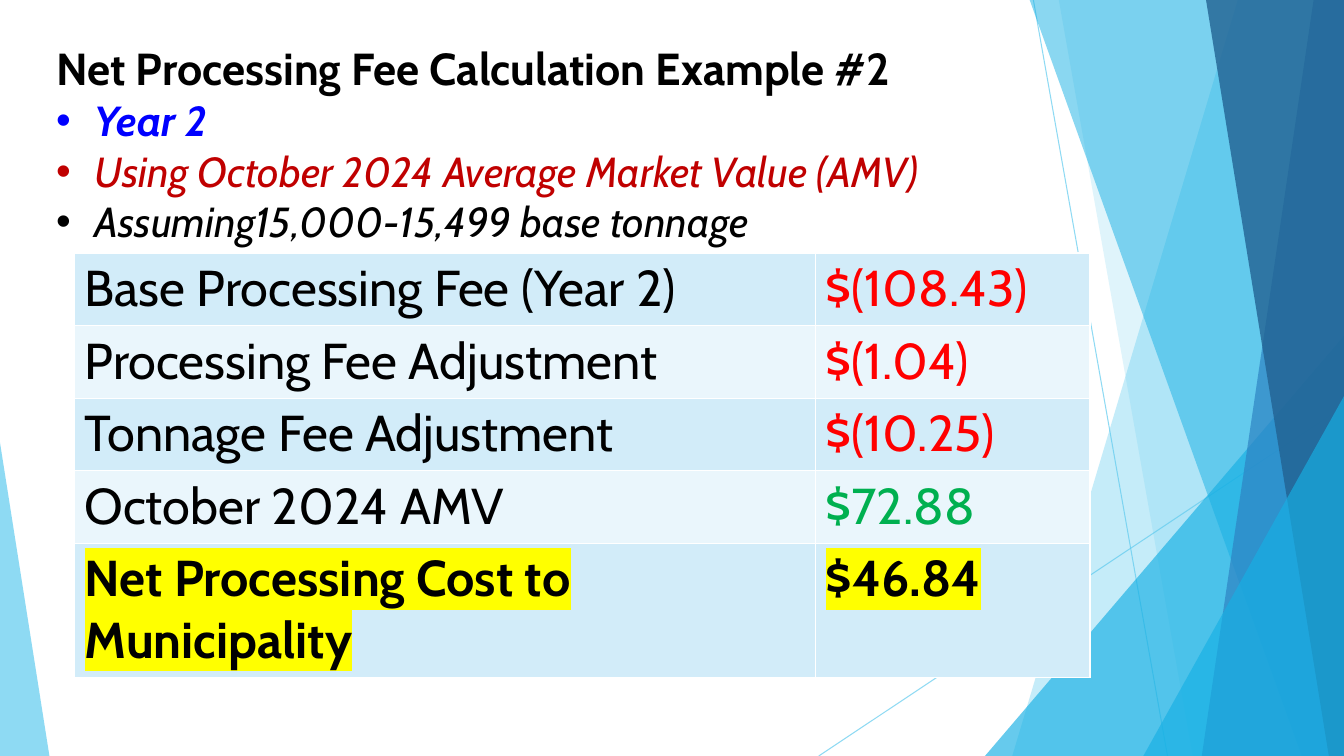
from dataclasses import dataclass

from lxml import etree
from pptx import Presentation
from pptx.dml.color import RGBColor
from pptx.enum.shapes import MSO_CONNECTOR, MSO_SHAPE
from pptx.enum.text import MSO_AUTO_SIZE
from pptx.oxml.ns import qn
from pptx.util import Emu, Inches, Pt

STRAIGHT = MSO_CONNECTOR.STRAIGHT
TRIANGLE = MSO_SHAPE.ISOSCELES_TRIANGLE
GROW = MSO_AUTO_SIZE.SHAPE_TO_FIT_TEXT
WIDTH, HEIGHT = Inches(13.33), Inches(7.5)


@dataclass(frozen=True)
class Theme:
    font: str = "Cabin"
    title_size: int = 32
    bullet_size: int = 30
    table_size: int = 36
    line_width: float = 0.75
    border_width: int = 1
    sky: str = "5FCBEF"
    azure: str = "17B0E4"
    blue: str = "2E83C3"
    navy: str = "226292"
    black: str = "000000"
    white: str = "FFFFFF"
    year: str = "0000FF"
    market: str = "C00000"
    charge: str = "FF0000"
    credit: str = "00B050"
    highlight: str = "FFFF00"
    bands: tuple[str, str] = ("D2ECF9", "EAF6FC")


THEME = Theme()


@dataclass(frozen=True)
class Ray:
    x1: float
    y1: float
    x2: float
    y2: float


@dataclass(frozen=True)
class Panel:
    top_x: float
    bottom_x: float
    color: str
    opacity: int


@dataclass(frozen=True)
class Wedge:
    left: float
    top: float
    width: float
    apex: int
    color: str
    opacity: int


@dataclass(frozen=True)
class Line:
    text: str
    size: int
    color: str = THEME.black
    bold: bool = False
    italic: bool = False
    bullet: bool = False


@dataclass(frozen=True)
class FeeRow:
    label: str
    amount: str
    color: str
    height: float = 9.6
    total: bool = False


RAYS = [Ray(76.89, 0, 86.87, 100), Ray(100, 53.73, 60.92, 100)]
DECOR = [
    Panel(92.12, 75.32, THEME.sky, 36),
    Panel(78.77, 88.75, THEME.sky, 20),
    Wedge(73.29, 44.4, 26.71, 1, THEME.azure, 66),
    Panel(76.59, 96.85, THEME.azure, 50),
    Panel(97.75, 89.42, THEME.blue, 70),
    Panel(89.72, 98.87, THEME.navy, 80),
    Wedge(85.07, 52.4, 14.93, 1, THEME.azure, 66),
    Wedge(0, 58.53, 3.68, 0, THEME.sky, 70),
]
HEADING = [
    Line("Net Processing Fee Calculation Example #2", THEME.title_size, bold=True),
    Line("Year 2", THEME.bullet_size, THEME.year, True, True, True),
    Line("Using October 2024 Average Market Value (AMV)", THEME.bullet_size,
         THEME.market, italic=True, bullet=True),
    Line("Assuming15,000-15,499 base tonnage", THEME.bullet_size, italic=True, bullet=True),
]
FEES = [
    FeeRow("Base Processing Fee (Year 2)", "$(108.43)", THEME.charge),
    FeeRow("Processing Fee Adjustment", "$(1.04)", THEME.charge),
    FeeRow("Tonnage Fee Adjustment", "$(10.25)", THEME.charge),
    FeeRow("October 2024 AMV", "$72.88", THEME.credit),
    FeeRow("Net Processing Cost to Municipality", "$46.84", THEME.black, 17.73, True),
]
COLUMNS = (55.14, 20.41)


def x(share: float) -> Emu:
    return Emu(round(WIDTH * share / 100))


def y(share: float) -> Emu:
    return Emu(round(HEIGHT * share / 100))


def set_opacity(sp_pr, opacity: int) -> None:
    color = next(sp_pr.iter(qn("a:srgbClr")))
    etree.SubElement(color, qn("a:alpha"), val=str(opacity * 1000))


def add_ray(slide, ray: Ray) -> None:
    line = slide.shapes.add_connector(STRAIGHT, x(ray.x1), y(ray.y1), x(ray.x2), y(ray.y2))
    line.line.color.rgb = RGBColor.from_string(THEME.sky)
    line.line.width = Pt(THEME.line_width)
    sp_pr = line._element.spPr
    set_opacity(sp_pr, 70)
    etree.SubElement(sp_pr, qn("a:effectLst"))


def add_decor(slide, item: Panel | Wedge) -> None:
    if isinstance(item, Panel):
        top = y(-0.13)
        outline = slide.shapes.build_freeform(x(item.top_x), top)
        outline.add_line_segments([(WIDTH, top), (WIDTH, HEIGHT), (x(item.bottom_x), HEIGHT)])
        sp = outline.convert_to_shape()
    else:
        sp = slide.shapes.add_shape(TRIANGLE, x(item.left), y(item.top),
                                    x(item.width), y(100 - item.top))
        sp.adjustments[0] = item.apex
    sp.shadow.inherit = False
    sp.fill.solid()
    sp.fill.fore_color.rgb = RGBColor.from_string(item.color)
    sp.line.fill.background()
    set_opacity(sp._element.spPr, item.opacity)


def write(p, line: Line):
    r = p.add_run()
    r.text = line.text
    font = p.font
    font.name = THEME.font
    font.size = Pt(line.size)
    font.bold = line.bold
    font.italic = line.italic
    font.color.rgb = RGBColor.from_string(line.color)
    if line.bullet:
        p_pr = p._p.get_or_add_pPr()
        indent = Inches(0.38)
        p_pr.set("marL", str(indent))
        p_pr.set("indent", str(-indent))
        bullet = etree.Element(qn("a:buChar"), char="•")
        p_pr.insert(0, bullet)
        bullet.addprevious(etree.Element(qn("a:buFont"), typeface="Arial"))
    return r


def add_heading(slide, lines: list[Line]) -> None:
    tf = slide.shapes.add_textbox(x(3.45), y(4.8), x(96.55), y(28.67)).text_frame
    tf.word_wrap = True
    tf.auto_size = GROW
    for i, line in enumerate(lines):
        write(tf.add_paragraph() if i else tf.paragraphs[0], line)


def style_cell(cell, band: str) -> None:
    tc_pr = cell._tc.get_or_add_tcPr()
    for side in ("lnL", "lnR", "lnT", "lnB"):
        border = etree.SubElement(tc_pr, qn(f"a:{side}"), w=str(Pt(THEME.border_width)))
        fill = etree.SubElement(border, qn("a:solidFill"))
        etree.SubElement(fill, qn("a:srgbClr"), val=THEME.white)
    cell.fill.solid()
    cell.fill.fore_color.rgb = RGBColor.from_string(band)


def add_fees(slide, fees: list[FeeRow]) -> None:
    frame = slide.shapes.add_table(len(fees), len(COLUMNS), x(5.55), y(33.47),
                                   x(sum(COLUMNS)), y(sum(fee.height for fee in fees)))
    table = frame.table
    table.first_row = False
    for column, share in zip(table.columns, COLUMNS):
        column.width = x(share)
    for i, fee in enumerate(fees):
        table.rows[i].height = y(fee.height)
        entries = ((fee.label, THEME.black), (fee.amount, fee.color))
        for cell, (text, color) in zip(table.rows[i].cells, entries):
            style_cell(cell, THEME.bands[i % 2])
            r = write(cell.text_frame.paragraphs[0],
                      Line(text, THEME.table_size, color, fee.total))
            if fee.total:
                mark = etree.SubElement(r._r.get_or_add_rPr(), qn("a:highlight"))
                etree.SubElement(mark, qn("a:srgbClr"), val=THEME.highlight)


def main() -> None:
    prs = Presentation()
    prs.slide_width, prs.slide_height = WIDTH, HEIGHT
    slide = prs.slides.add_slide(prs.slide_layouts[6])
    for ray in RAYS:
        add_ray(slide, ray)
    for item in DECOR:
        add_decor(slide, item)
    add_heading(slide, HEADING)
    add_fees(slide, FEES)
    prs.save("out.pptx")


if __name__ == "__main__":
    main()
